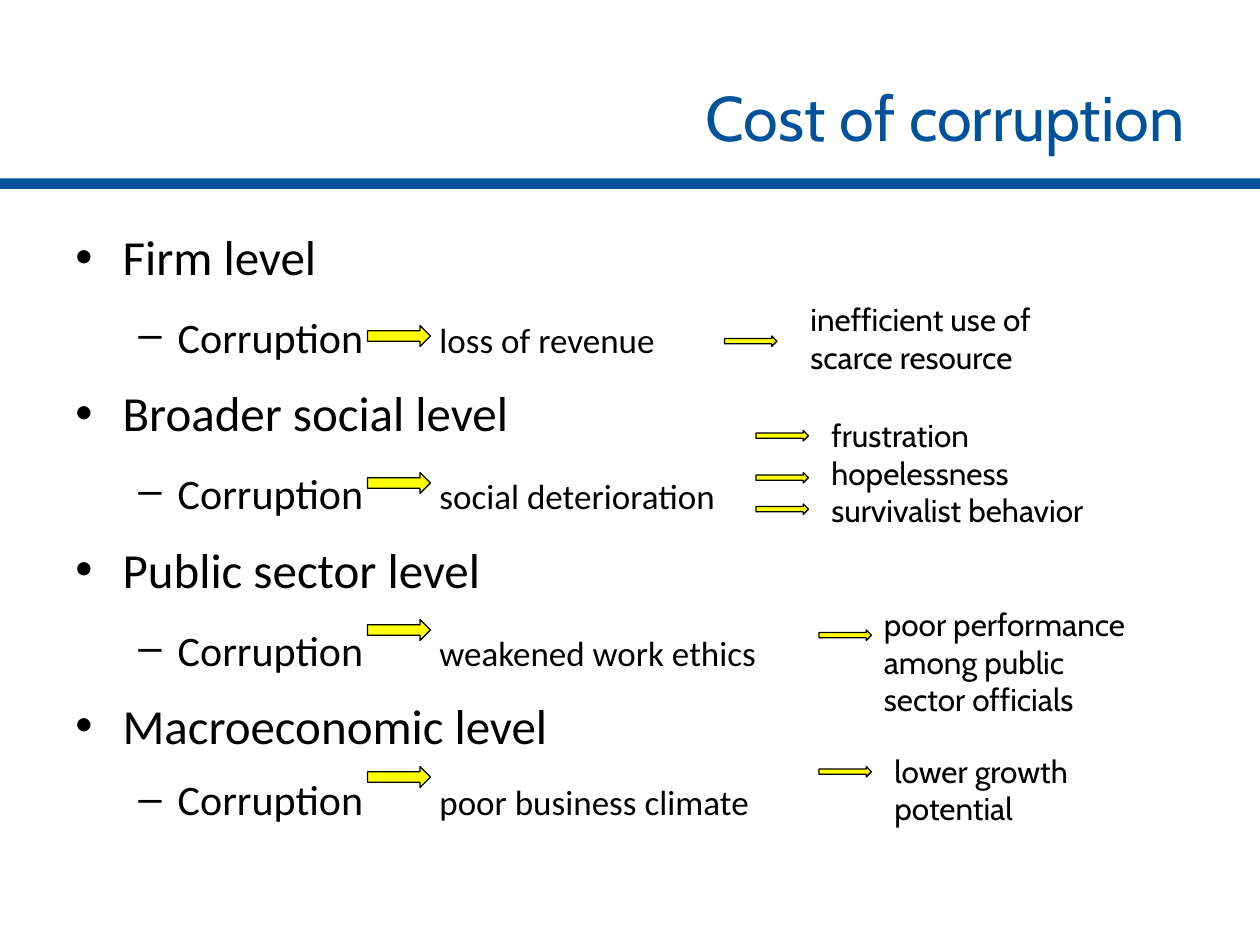
from lxml import etree
from pptx import Presentation
from pptx.dml.color import RGBColor
from pptx.enum.shapes import MSO_SHAPE
from pptx.enum.text import MSO_ANCHOR, PP_ALIGN
from pptx.oxml.ns import qn
from pptx.util import Pt

RECTANGLE = MSO_SHAPE.RECTANGLE
RIGHT_ARROW = MSO_SHAPE.RIGHT_ARROW
MIDDLE = MSO_ANCHOR.MIDDLE
LEFT, RIGHT = PP_ALIGN.LEFT, PP_ALIGN.RIGHT

BLUE = RGBColor(0x00, 0x53, 0x9B)
YELLOW = RGBColor(0xFF, 0xFF, 0x00)
BLACK = RGBColor(0x00, 0x00, 0x00)

EFFECT_TAB = 208

LEVELS = [
    ("Firm level", "loss of revenue", 28),
    ("Broader social level", "social deterioration", 28),
    ("Public sector level", "weakened work ethics", 28),
    ("Macroeconomic level", "poor business climate", 24),
]

# Left, top, width, height, lines
OUTCOMES = [
    (456, 168, 168, 51, ["inefficient use of scarce resource"]),
    (468, 234, 174, 73, ["frustration", "hopelessness", "survivalist behavior"]),
    (498, 342, 162, 73, ["poor performance among public sector officials"]),
    (504, 426, 126, 51, ["lower growth potential"]),
]

CAUSE_ARROWS = [(210, 186 + 84 * row, 36, 12) for row in range(len(LEVELS))]
OUTCOME_ARROWS = [
    (left, top, 30, 6)
    for left, top in [(414, 192), (432, 246), (432, 270), (432, 288), (468, 360), (468, 438)]
]


def write(paragraph, text, *, size, font="Calibri", color=BLACK, align=LEFT):
    paragraph.alignment = align
    run = paragraph.add_run()
    run.text = text
    run.font.size = Pt(size)
    run.font.name = font
    run.font.color.rgb = color


def set_bullet(paragraph, symbol, margin, hanging):
    """Give the paragraph a hanging bullet and the tab stop of the effects."""
    properties = paragraph._p.get_or_add_pPr()
    properties.set("marL", str(Pt(margin)))
    properties.set("indent", str(-Pt(hanging)))
    etree.SubElement(properties, qn("a:buFont"), typeface="Arial")
    etree.SubElement(properties, qn("a:buChar"), char=symbol)
    tabs = etree.SubElement(properties, qn("a:tabLst"))
    etree.SubElement(tabs, qn("a:tab"), pos=str(Pt(EFFECT_TAB)), algn="l")


presentation = Presentation()
presentation.slide_width, presentation.slide_height = Pt(720), Pt(540)
slide = presentation.slides.add_slide(presentation.slide_layouts[6])
shapes = slide.shapes

rule = shapes.add_shape(RECTANGLE, Pt(0), Pt(102), Pt(720), Pt(6))
rule.shadow.inherit = False
rule.fill.solid()
rule.fill.fore_color.rgb = BLUE
rule.line.fill.background()

title = shapes.add_textbox(Pt(36), Pt(21.6), Pt(648), Pt(90)).text_frame
title.word_wrap = True
title.vertical_anchor = MIDDLE
write(title.paragraphs[0], "Cost of corruption", size=36, font="Cabin", color=BLUE, align=RIGHT)

body = shapes.add_textbox(Pt(36), Pt(126), Pt(648), Pt(356.4)).text_frame
body.word_wrap = True
for index, (level, effect, gap_size) in enumerate(LEVELS):
    heading = body.add_paragraph() if index else body.paragraphs[0]
    set_bullet(heading, "•", 27, 27)
    if index:
        heading.space_before = Pt(5)
    heading.space_after = Pt(6)
    write(heading, level, size=28)

    chain = body.add_paragraph()
    set_bullet(chain, "–", 58.5, 22.5)
    chain.space_before = Pt(5)
    chain.space_after = Pt(6)
    write(chain, "Corruption", size=24)
    write(chain, "\t", size=gap_size)
    write(chain, effect, size=20)

for left, top, width, height, lines in OUTCOMES:
    outcome = shapes.add_textbox(Pt(left), Pt(top), Pt(width), Pt(height)).text_frame
    outcome.word_wrap = True
    for index, line in enumerate(lines):
        paragraph = outcome.add_paragraph() if index else outcome.paragraphs[0]
        write(paragraph, line, size=18, font="Cabin")

for left, top, width, height in CAUSE_ARROWS + OUTCOME_ARROWS:
    arrow = shapes.add_shape(RIGHT_ARROW, Pt(left), Pt(top), Pt(width), Pt(height))
    arrow.shadow.inherit = False
    arrow.fill.solid()
    arrow.fill.fore_color.rgb = YELLOW
    arrow.line.color.rgb = BLACK
    arrow.line.width = Pt(0.75)

presentation.save("out.pptx")
